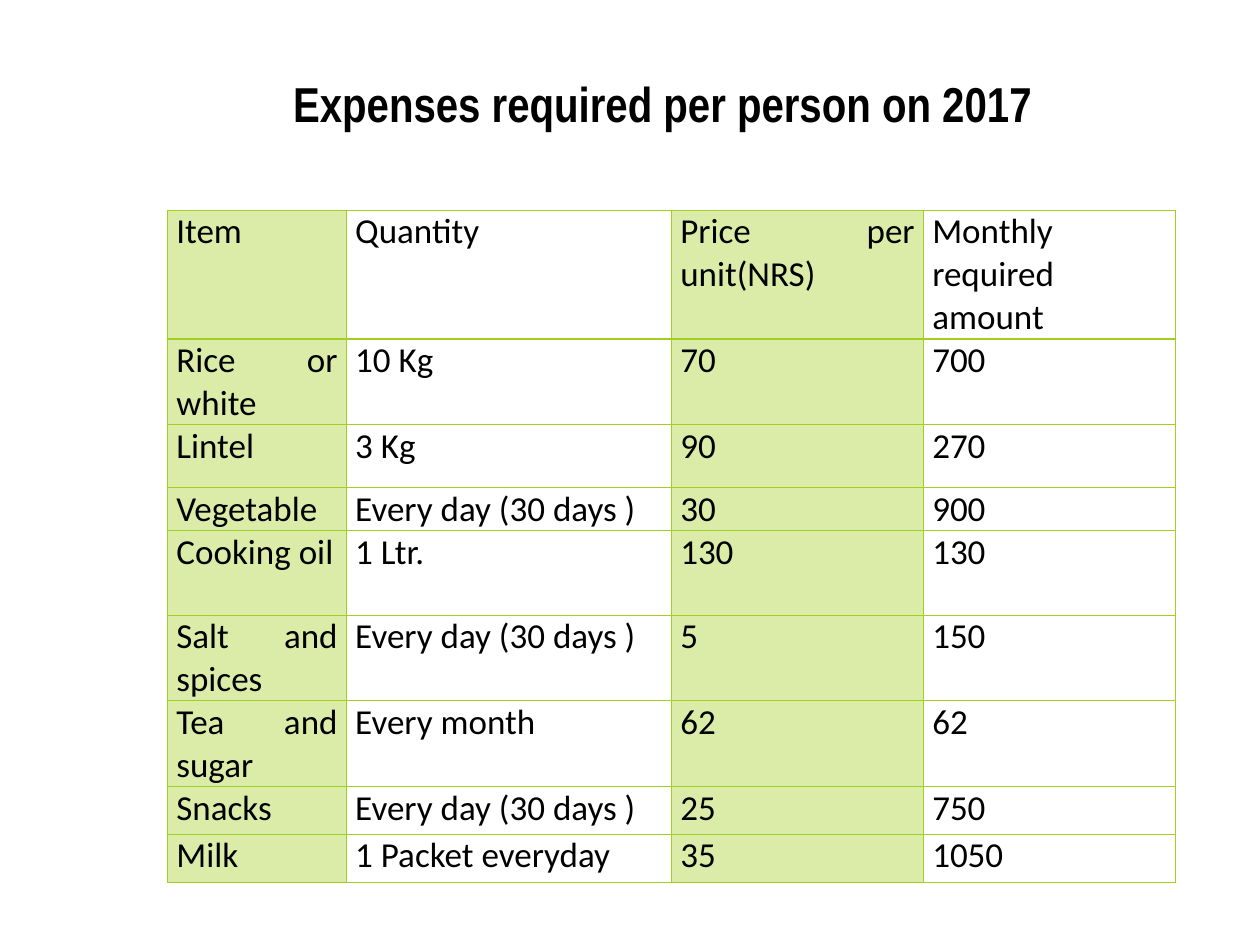
from lxml.etree import SubElement
from pptx import Presentation
from pptx.dml.color import RGBColor
from pptx.enum.text import MSO_ANCHOR, PP_ALIGN
from pptx.oxml.ns import qn
from pptx.util import Inches, Pt

TITLE = "Expenses required per person on 2017"
EXPENSES = [
    ("Item", "Quantity ", "Price per unit(NRS)", "Monthly required amount"),
    ("Rice or white", "10 Kg", "70", "700"),
    ("Lintel ", "3 Kg", "90", "270"),
    ("Vegetable", "Every day (30 days )", "30", "900"),
    ("Cooking oil", "1 Ltr.", "130", "130"),
    ("Salt and spices ", "Every day (30 days )", "5", "150"),
    ("Tea and sugar", "Every month", "62", "62"),
    ("Snacks ", "Every day (30 days )", "25", "750"),
    ("Milk", "1 Packet everyday", "35", "1050"),
]
COLUMN_WIDTHS = [1.42, 2.58, 2, 2]
ROW_HEIGHTS = [0.75, 0.67, 0.5, 0.17, 0.67, 0.67, 0.67, 0.38, 0.38]
THEME = {
    "title_font": "Arial Narrow", "title_size": Pt(28),
    "body_font": "Calibri", "body_size": Pt(20),
    "text": RGBColor(0, 0, 0), "shade": RGBColor(0xA5, 0xD0, 0x28),
    "shade_opacity": 40, "border": "A3CF23", "border_width": Pt(0.75),
}


def style_paragraph(paragraph, role, alignment, bold=False):
    paragraph.alignment = alignment
    font = paragraph.font
    font.name = THEME[f"{role}_font"]
    font.size = THEME[f"{role}_size"]
    font.bold = bold
    font.color.rgb = THEME["text"]


def shade_cell(cell):
    cell.fill.solid()
    cell.fill.fore_color.rgb = THEME["shade"]
    color = cell._tc.tcPr.find(f"{qn('a:solidFill')}/{qn('a:srgbClr')}")
    SubElement(color, qn("a:alpha"), val=str(THEME["shade_opacity"] * 1000))


def add_borders(cell):
    """Put the four edges before the fill, as the schema orders them."""
    properties = cell._tc.get_or_add_tcPr()
    for position, edge in enumerate(("lnL", "lnR", "lnT", "lnB")):
        line = SubElement(properties, qn(f"a:{edge}"), w=str(int(THEME["border_width"])))
        fill = SubElement(line, qn("a:solidFill"))
        SubElement(fill, qn("a:srgbClr"), val=THEME["border"])
        properties.insert(position, line)


def add_title(page):
    title = page.shapes.title
    title.left, title.top = Inches(0.67), Inches(0.5)
    title.width, title.height = Inches(9.17), Inches(0.74)
    frame = title.text_frame
    frame.text = TITLE
    frame.word_wrap = True
    frame.vertical_anchor = MSO_ANCHOR.TOP
    frame.margin_left = frame.margin_right = frame.margin_bottom = Inches(0.05)
    frame.margin_top = Inches(0.08)
    style_paragraph(frame.paragraphs[0], "title", PP_ALIGN.CENTER, bold=True)


def add_expense_table(page):
    table = page.shapes.add_table(
        len(EXPENSES), len(COLUMN_WIDTHS), Inches(1.33), Inches(1.67),
        Inches(sum(COLUMN_WIDTHS)), Inches(sum(ROW_HEIGHTS))).table
    table.first_row = table.horz_banding = False
    for column, width in zip(table.columns, COLUMN_WIDTHS):
        column.width = Inches(width)
    for row, height, values in zip(table.rows, ROW_HEIGHTS, EXPENSES):
        row.height = Inches(height)
        for index, (cell, value) in enumerate(zip(row.cells, values)):
            cell.text = value
            cell.margin_left = cell.margin_right = Inches(0.07)
            cell.margin_top = cell.margin_bottom = 0
            style_paragraph(cell.text_frame.paragraphs[0], "body", PP_ALIGN.JUSTIFY)
            if index % 2 == 0:
                shade_cell(cell)
            else:
                cell.fill.background()
            add_borders(cell)


def main():
    deck = Presentation()
    deck.slide_width, deck.slide_height = Inches(10), Inches(7.5)
    page = deck.slides.add_slide(deck.slide_layouts[5])
    add_title(page)
    add_expense_table(page)
    deck.save("out.pptx")


if __name__ == "__main__":
    main()
